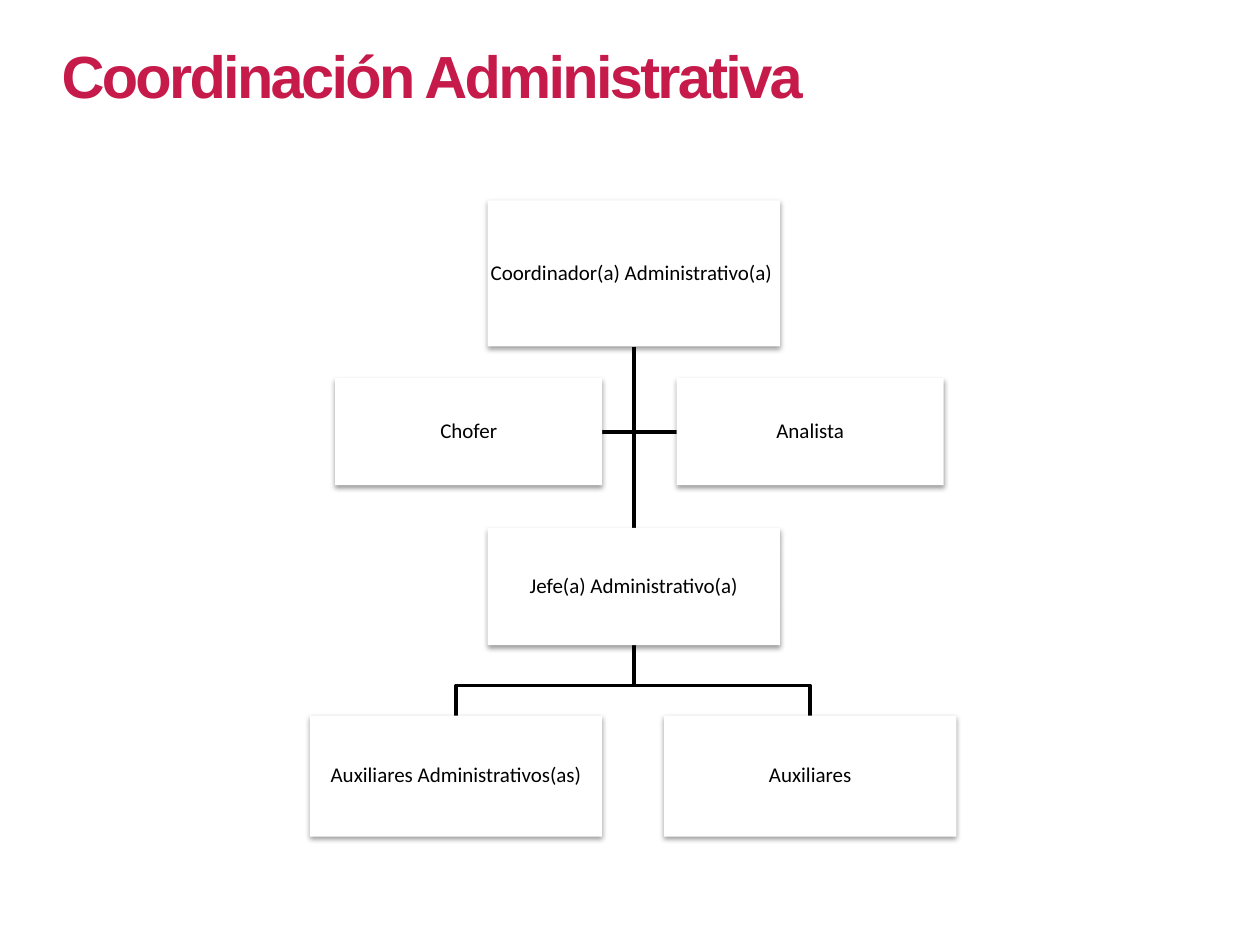
from lxml import etree
from pptx import Presentation
from pptx import util as u
from pptx.dml.color import RGBColor
from pptx.enum import shapes, text
from pptx.oxml import parse_xml
from pptx.oxml.ns import nsdecls, qn

AXIS = 5.03
BLACK, WHITE, CRIMSON = "000000", "FFFFFF", "C51A4A"
SHADOW = (
    f'<a:effectLst {nsdecls("a")}><a:outerShdw blurRad="39370" dist="20320" '
    'dir="5400000" rotWithShape="0"><a:srgbClr val="000000">'
    '<a:alpha val="38000"/></a:srgbClr></a:outerShdw></a:effectLst>'
)


def color(value):
    """Return the colour for a hex string."""
    return RGBColor.from_string(value)


def style_run(r, font, size, value, bold=False):
    """Set the font, size and colour of a run."""
    r.font.name = font
    r.font.size = u.Pt(size)
    r.font.bold = bold
    r.font.color.rgb = color(value)


def style_line(sp):
    """Give a connector or path its black line without shadow."""
    sp.line.color.rgb = color(BLACK)
    sp.line.width = u.Pt(2)


def add_title(s, label):
    """Add the slide title with tight letter spacing."""
    sp = s.shapes.add_textbox(u.Inches(0.39), u.Inches(0.26), u.Inches(6.97), u.Inches(0.69))
    tf = sp.text_frame
    tf.word_wrap = True
    tf.text = label
    r = tf.paragraphs[0].runs[0]
    style_run(r, "Arial", 34, CRIMSON, bold=True)
    r.font._element.set("spc", "-150")


def add_trunk(s, top, bottom):
    """Add the straight vertical line on the chart axis."""
    x = u.Inches(AXIS)
    cn = s.shapes.add_connector(
        shapes.MSO_CONNECTOR.STRAIGHT, x, u.Inches(top), x, u.Inches(bottom)
    )
    etree.SubElement(cn._element.spPr, qn("a:effectLst"))
    style_line(cn)


def add_branch(s, *points):
    """Add an open elbow line through the points."""
    pts = [(u.Inches(x), u.Inches(y)) for x, y in points]
    fb = s.shapes.build_freeform(*pts[0])
    fb.add_line_segments(pts[1:], close=False)
    sp = fb.convert_to_shape()
    sp.fill.background()
    sp.shadow.inherit = False
    style_line(sp)


def add_post(s, label, left, top, width, height):
    """Add a white shadowed box with a centred job title."""
    sp = s.shapes.add_shape(
        shapes.MSO_SHAPE.RECTANGLE, *map(u.Inches, (left, top, width, height))
    )
    sp.fill.solid()
    sp.fill.fore_color.rgb = color(WHITE)
    sp.line.fill.background()
    sp._element.spPr.append(parse_xml(SHADOW))
    tf = sp.text_frame
    tf.word_wrap = True
    tf.vertical_anchor = text.MSO_ANCHOR.MIDDLE
    tf.margin_left = tf.margin_right = tf.margin_top = tf.margin_bottom = u.Inches(0.01)
    tf.text = label
    p = tf.paragraphs[0]
    p.alignment = text.PP_ALIGN.CENTER
    p.line_spacing = 0.9
    style_run(p.runs[0], "Calibri", 12, BLACK)


def main():
    """Build the organisation chart slide."""
    prs = Presentation()
    prs.slide_width, prs.slide_height = u.Inches(10), u.Inches(7.5)
    s = prs.slides.add_slide(prs.slide_layouts[6])
    add_title(s, "Coordinación Administrativa")

    for x in (5.37, 4.78):
        add_branch(s, (AXIS, 2.75), (AXIS, 3.43), (x, 3.43))
    for x in (6.43, 3.62):
        add_branch(s, (AXIS, 5.12), (AXIS, 5.44), (x, 5.44), (x, 5.68))
    add_trunk(s, 2.75, 4.19)

    posts = [
        ("Coordinador(a) Administrativo(a) ", 3.87, 1.59, 2.32, 1.16),
        ("Jefe(a) Administrativo(a)", 3.87, 4.19, 2.32, 0.93),
        ("Auxiliares Administrativos(as)", 2.46, 5.68, 2.32, 0.96),
        ("Auxiliares", 5.27, 5.68, 2.32, 0.96),
        ("Chofer", 2.66, 3, 2.12, 0.85),
        ("Analista", 5.37, 3, 2.12, 0.85),
    ]
    for post in posts:
        add_post(s, *post)
    prs.save("out.pptx")


if __name__ == "__main__":
    main()
